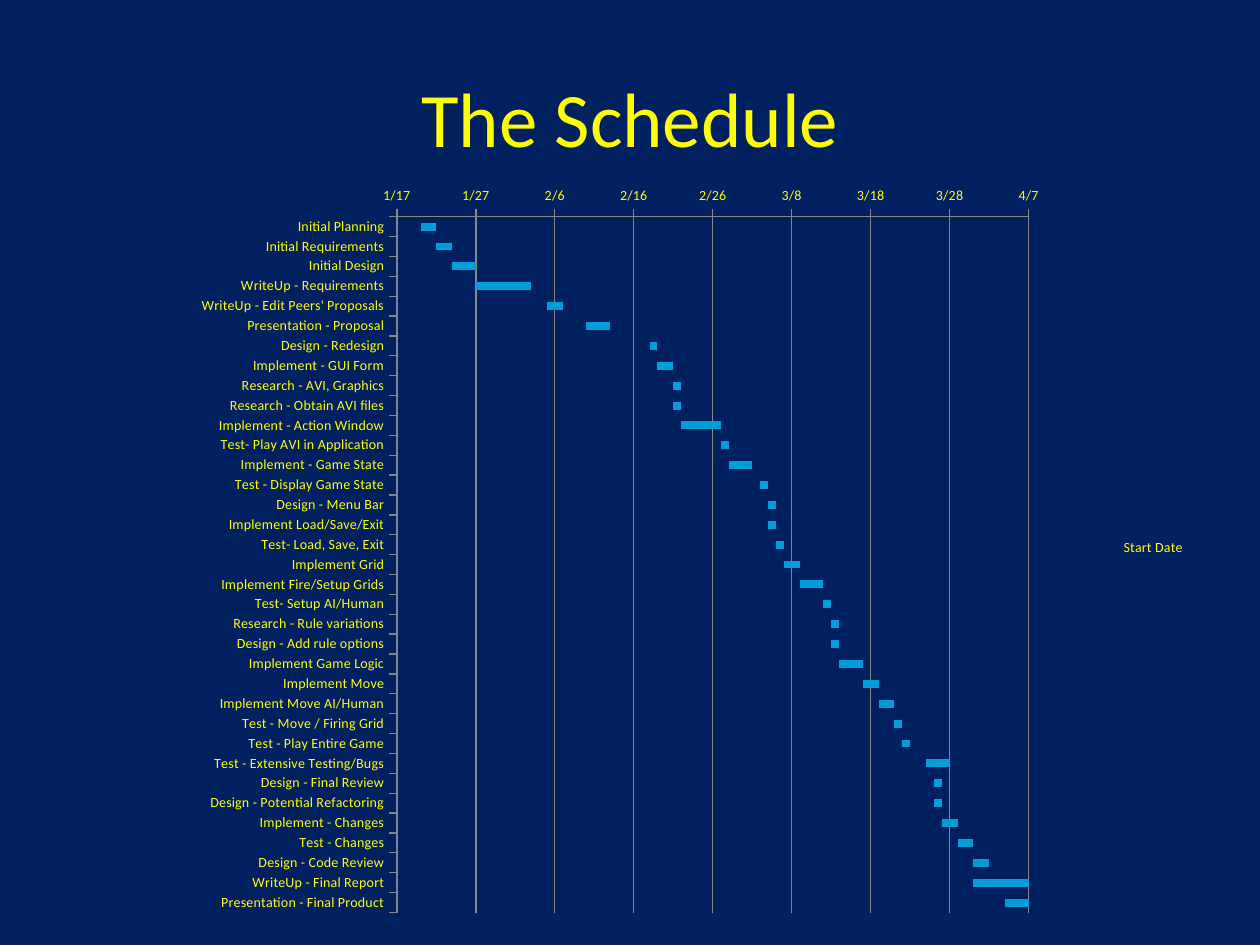
from lxml.etree import SubElement
from pptx import Presentation
from pptx.chart.data import CategoryChartData
from pptx.dml.color import RGBColor
from pptx.enum.chart import XL_CHART_TYPE, XL_LEGEND_POSITION, XL_TICK_MARK
from pptx.enum.text import MSO_ANCHOR, PP_ALIGN
from pptx.oxml import parse_xml
from pptx.oxml.ns import nsdecls, qn
from pptx.util import Inches, Pt

FONT = "Calibri"
NAVY, YELLOW, BLUE, GREY = "002060", "FFFF00", "009DD9", "868686"
FIRST, LAST, STEP = 40560, 40640, 10
EDGE = {"xMode": "edge", "yMode": "edge"}
PLOT = {"layoutTarget": "inner", **EDGE, "x": 0.373, "y": 0.15, "w": 0.47, "h": 0.789}
KEY = {**EDGE, "x": 0.9, "y": 0.51}

TASKS = [
    ("Initial Planning", 40563, 2),
    ("Initial Requirements", 40565, 2),
    ("Initial Design", 40567, 3),
    ("WriteUp - Requirements", 40570, 7),
    ("WriteUp - Edit Peers' Proposals", 40579, 2),
    ("Presentation - Proposal", 40584, 3),
    ("Design - Redesign", 40592, 1),
    ("Implement - GUI Form", 40593, 2),
    ("Research - AVI, Graphics", 40595, 1),
    ("Research - Obtain AVI files", 40595, 1),
    ("Implement - Action Window", 40596, 5),
    ("Test- Play AVI in Application", 40601, 1),
    ("Implement - Game State", 40602, 3),
    ("Test - Display Game State", 40606, 1),
    ("Design - Menu Bar", 40607, 1),
    ("Implement Load/Save/Exit", 40607, 1),
    ("Test- Load, Save, Exit", 40608, 1),
    ("Implement Grid", 40609, 2),
    ("Implement Fire/Setup Grids", 40611, 3),
    ("Test- Setup AI/Human", 40614, 1),
    ("Research - Rule variations", 40615, 1),
    ("Design - Add rule options", 40615, 1),
    ("Implement Game Logic", 40616, 3),
    ("Implement Move", 40619, 2),
    ("Implement Move AI/Human", 40621, 2),
    ("Test - Move / Firing Grid", 40623, 1),
    ("Test - Play Entire Game", 40624, 1),
    ("Test - Extensive Testing/Bugs", 40627, 3),
    ("Design - Final Review", 40628, 1),
    ("Design - Potential Refactoring", 40628, 1),
    ("Implement - Changes", 40629, 2),
    ("Test - Changes", 40631, 2),
    ("Design - Code Review", 40633, 2),
    ("WriteUp - Final Report", 40633, 7),
    ("Presentation - Final Product", 40637, 3),
]


def paint(color, value):
    color.rgb = RGBColor.from_string(value)


def style(font, size, color):
    font.name = FONT
    font.size = Pt(size)
    paint(font.color, color)


def rule(line):
    line.width = Pt(0.75)
    line.fill.solid()
    paint(line.color, GREY)


def add_title(slide, text):
    box = slide.shapes.add_textbox(Inches(0.5), Inches(0.3), Inches(9), Inches(1.25))
    frame = box.text_frame
    frame.word_wrap = True
    frame.vertical_anchor = MSO_ANCHOR.MIDDLE
    para = frame.paragraphs[0]
    para.alignment = PP_ALIGN.CENTER
    run = para.add_run()
    run.text = text
    style(run.font, 44, YELLOW)


def set_axis(axis):
    axis.major_tick_mark = XL_TICK_MARK.OUTSIDE
    axis.minor_tick_mark = XL_TICK_MARK.NONE
    rule(axis.format.line)
    style(axis.tick_labels.font, 8, YELLOW)


def place(part, index, values):
    for old in part.findall(qn("c:layout")):
        part.remove(old)
    layout = parse_xml(f"<c:layout {nsdecls('c')}/>")
    manual = SubElement(layout, qn("c:manualLayout"))
    for tag, value in values.items():
        SubElement(manual, qn(f"c:{tag}")).set("val", str(value))
    part.insert(index, layout)


def set_legend(chart):
    chart.has_legend = True
    legend = chart.legend
    legend.position = XL_LEGEND_POSITION.RIGHT
    legend.include_in_layout = False
    style(legend.font, 8, YELLOW)
    entry = parse_xml(
        f'<c:legendEntry {nsdecls("c")}><c:idx val="0"/><c:delete val="1"/></c:legendEntry>'
    )
    legend._element.insert(1, entry)
    place(legend._element, 2, KEY)


def add_gantt(slide):
    names, starts, spans = zip(*TASKS)
    data = CategoryChartData()
    data.categories = names
    data.add_series("Start Date", starts, "m/d;@")
    data.add_series("Duration", spans, "General")
    chart = slide.shapes.add_chart(
        XL_CHART_TYPE.BAR_STACKED,
        Inches(-0.83), Inches(0.67), Inches(10.67), Inches(7), data,
    ).chart
    chart.has_title = False
    style(chart.font, 8, YELLOW)

    plot = chart.plots[0]
    plot.gap_width = 151
    plot.overlap = 100
    plot.vary_by_categories = False
    start, span = plot.series
    start.format.fill.background()
    start.format.line.fill.background()
    span.format.fill.solid()
    paint(span.format.fill.fore_color, BLUE)

    tasks, dates = chart.category_axis, chart.value_axis
    for axis in (tasks, dates):
        set_axis(axis)
    tasks.reverse_order = True
    dates.minimum_scale = FIRST
    dates.maximum_scale = LAST
    dates.major_unit = STEP
    dates.has_major_gridlines = True
    rule(dates.major_gridlines.format.line)
    dates.tick_labels.number_format = "m/d;@"
    dates.tick_labels.number_format_is_linked = False

    place(plot._element.getparent(), 0, PLOT)
    set_legend(chart)


def main():
    deck = Presentation()
    deck.slide_width, deck.slide_height = Inches(10), Inches(7.5)
    slide = deck.slides.add_slide(deck.slide_layouts[6])
    fill = slide.background.fill
    fill.solid()
    paint(fill.fore_color, NAVY)
    add_title(slide, "The Schedule")
    add_gantt(slide)
    deck.save("out.pptx")


if __name__ == "__main__":
    main()
